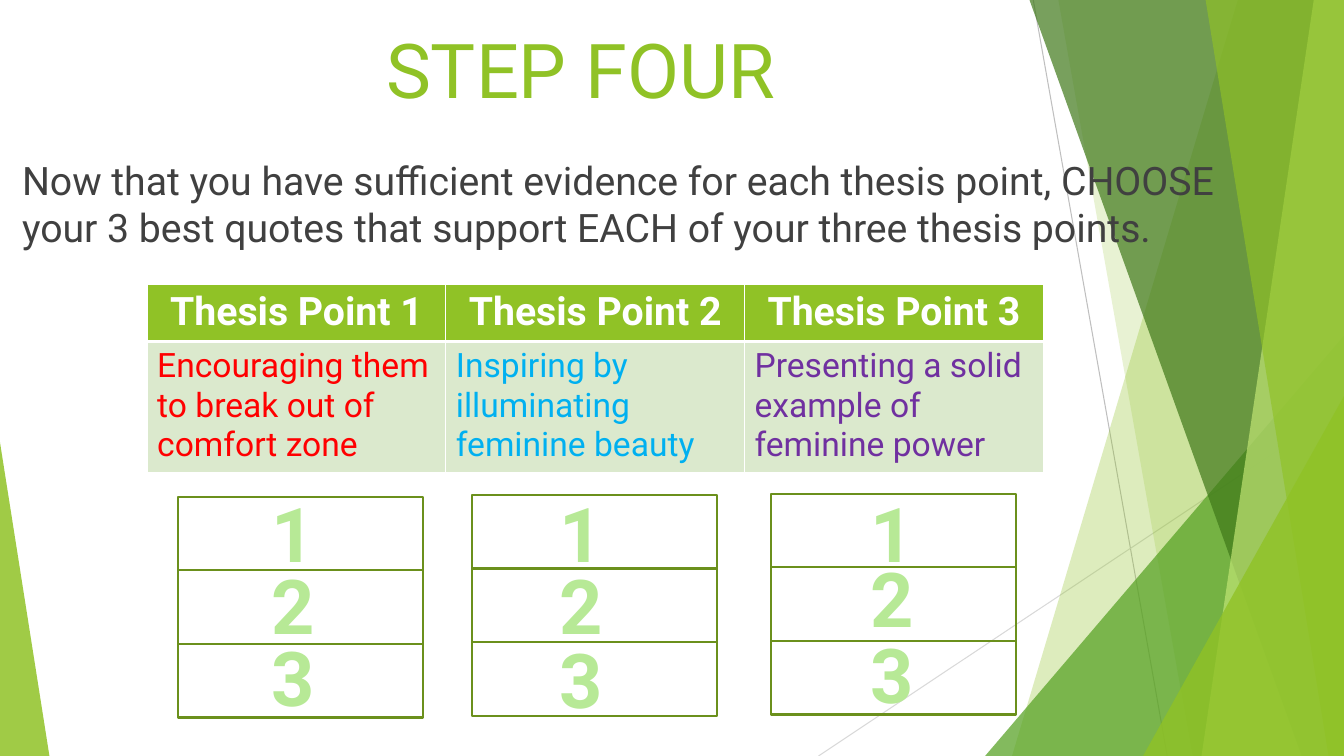
"""Build the "Step Four" slide: thesis points with three numbered quote boxes each."""
from dataclasses import dataclass
from typing import Any

from lxml.etree import SubElement
from pptx import Presentation
from pptx.dml.color import RGBColor
from pptx.enum.shapes import MSO_CONNECTOR as Connector, MSO_SHAPE as Preset
from pptx.enum.text import MSO_ANCHOR as Anchor, PP_ALIGN as Align
from pptx.oxml.ns import qn
from pptx.util import Inches, Pt

SLIDE_WIDTH, SLIDE_HEIGHT = Inches(13.33), Inches(7.5)
GREEN = RGBColor(0x90, 0xC2, 0x26)
LEAF = RGBColor(0x54, 0xA0, 0x21)
FOREST = RGBColor(0x3F, 0x78, 0x19)
LIME = RGBColor(0xC0, 0xE4, 0x74)
OLIVE = RGBColor(0x6B, 0x90, 0x1C)
MINT = RGBColor(0xB7, 0xE9, 0x96)
PALE = RGBColor(0xDB, 0xE9, 0xCD)
CHARCOAL = RGBColor(0x40, 0x40, 0x40)
GRAY = RGBColor(0xBF, 0xBF, 0xBF)
SILVER = RGBColor(0xD9, 0xD9, 0xD9)
WHITE = RGBColor(0xFF, 0xFF, 0xFF)
RED = RGBColor(0xFF, 0x00, 0x00)
BLUE = RGBColor(0x00, 0xB0, 0xF0)
PURPLE = RGBColor(0x70, 0x30, 0xA0)


@dataclass(frozen=True)
class Area:
    """A rectangle in percent of the slide's width and height."""
    left: float
    top: float
    width: float
    height: float

    def box(self) -> tuple[int, int, int, int]:
        """Return the rectangle in slide units."""
        return across(self.left), down(self.top), across(self.width), down(self.height)


@dataclass(frozen=True)
class Ray:
    """A thin background line between two points."""
    start: tuple[float, float]
    end: tuple[float, float]
    color: RGBColor


@dataclass(frozen=True)
class Facet:
    """A slanted pane that reaches the right edge."""
    top_left: float
    bottom_left: float
    color: RGBColor
    opacity: int


@dataclass(frozen=True)
class Wedge:
    """A right-angled triangle at the foot of the slide."""
    area: Area
    apex: float
    color: RGBColor
    opacity: int


@dataclass(frozen=True)
class ThesisPoint:
    """A table column with its stack of quote boxes."""
    heading: str
    summary: str
    color: RGBColor
    box_left: float
    box_top: float
    digit_left: float
    digit_tops: tuple[float, float, float]


RAYS = (Ray((76.88, 0), (86.85, 100), GRAY), Ray((100, 53.73), (60.9, 100), SILVER))
PANES = (
    Facet(92.1, 75.3, GREEN, 30),
    Facet(78.75, 88.73, GREEN, 20),
    Wedge(Area(73.3, 44.4, 26.7, 55.6), 1, LEAF, 72),
    Facet(76.6, 96.85, FOREST, 70),
    Facet(97.75, 89.4, LIME, 70),
    Facet(89.7, 98.85, GREEN, 65),
    Wedge(Area(85.05, 52.4, 14.95, 47.6), 1, GREEN, 80),
    Wedge(Area(0, 58.5, 3.68, 41.5), 0, GREEN, 85),
)
POINTS = (
    ThesisPoint("Thesis Point 1", "Encouraging them to break out of comfort zone", RED,
                13.28, 65.73, 19.35, (63.73, 73.33, 82.8)),
    ThesisPoint("Thesis Point 2", "Inspiring by illuminating feminine beauty", BLUE,
                35.1, 65.47, 40.8, (63.73, 73.33, 83.07)),
    ThesisPoint("Thesis Point 3", "Presenting a solid example of feminine power", PURPLE,
                57.4, 65.33, 63.98, (63.73, 72.4, 82.4)),
)
TITLE_AREA = Area(7.95, 2.4, 70.5, 19.2)
BODY_AREA = Area(0.9, 20, 92.63, 25.07)
TABLE_AREA = Area(10.95, 37.6, 66.68, 24.4)
ROW_HEIGHTS = (7.3, 17.1)
BOX_WIDTH, BOX_HEIGHT = 18.23, 9.73
DIGIT_WIDTH, DIGIT_HEIGHT = 4.88, 13.47
BODY_TEXT = ("Now that you have sufficient evidence for each thesis point, CHOOSE "
             "your 3 best quotes that support EACH of your three thesis points.")


def across(percent: float) -> int:
    """Turn a share of the slide's width into slide units."""
    return round(SLIDE_WIDTH * percent / 100)


def down(percent: float) -> int:
    """Turn a share of the slide's height into slide units."""
    return round(SLIDE_HEIGHT * percent / 100)


def write(frame: Any, text: str, size: int, color: RGBColor,
          align: Align = Align.LEFT, bold: bool = False) -> None:
    """Fill a text frame with one formatted paragraph."""
    paragraph = frame.paragraphs[0]
    paragraph.alignment = align
    run = paragraph.add_run()
    run.text = text
    for name, value in {"name": "Roboto", "size": Pt(size), "bold": bold}.items():
        setattr(run.font, name, value)
    run.font.color.rgb = color


def add_text(slide: Any, area: Area, text: str, size: int, color: RGBColor,
             align: Align = Align.LEFT, bold: bool = False) -> None:
    """Add a wrapping text box anchored at its top."""
    frame = slide.shapes.add_textbox(*area.box()).text_frame
    for name, value in {"word_wrap": True, "vertical_anchor": Anchor.TOP}.items():
        setattr(frame, name, value)
    write(frame, text, size, color, align, bold)


def add_ray(slide: Any, ray: Ray) -> None:
    """Draw a thin background line."""
    (start_x, start_y), (end_x, end_y) = ray.start, ray.end
    line = slide.shapes.add_connector(
        Connector.STRAIGHT, across(start_x), down(start_y), across(end_x), down(end_y))
    line.line.color.rgb = ray.color
    line.line.width = Pt(0.75)
    SubElement(line.element.spPr, qn("a:effectLst"))


def add_pane(slide: Any, pane: Facet | Wedge) -> None:
    """Draw a translucent facet or wedge."""
    if isinstance(pane, Facet):
        builder = slide.shapes.build_freeform(across(pane.top_left), 0)
        builder.add_line_segments(
            [(across(100), 0), (across(100), down(100)), (across(pane.bottom_left), down(100))])
        shape = builder.convert_to_shape()
    else:
        shape = slide.shapes.add_shape(Preset.ISOSCELES_TRIANGLE, *pane.area.box())
        shape.adjustments[0] = pane.apex
    shape.shadow.inherit = False
    shape.fill.solid()
    shape.fill.fore_color.rgb = pane.color
    shape.line.fill.background()
    color = shape.element.spPr.find(f"{qn('a:solidFill')}/{qn('a:srgbClr')}")
    SubElement(color, qn("a:alpha"), val=str(pane.opacity * 1000))


def add_borders(cell: Any, widths: dict[str, int]) -> None:
    """Give a table cell white borders of the given point widths."""
    properties = cell._tc.get_or_add_tcPr()
    for position, (side, width) in enumerate(widths.items()):
        border = SubElement(properties, qn(f"a:ln{side}"), w=str(Pt(width)))
        fill = SubElement(border, qn("a:solidFill"))
        SubElement(fill, qn("a:srgbClr"), val=str(WHITE))
        properties.insert(position, border)


def add_points_table(slide: Any) -> None:
    """Add the table of thesis points."""
    table = slide.shapes.add_table(len(ROW_HEIGHTS), len(POINTS), *TABLE_AREA.box()).table
    table.horz_banding = False
    for row, height in zip(table.rows, ROW_HEIGHTS):
        row.height = down(height)
    for column, point in enumerate(POINTS):
        table.columns[column].width = across(TABLE_AREA.width / len(POINTS))
        header, summary = table.cell(0, column), table.cell(1, column)
        write(header.text_frame, point.heading, 28, WHITE, Align.CENTER, True)
        write(summary.text_frame, point.summary, 24, point.color)
        for cell, color, top, bottom in ((header, GREEN, 1, 3), (summary, PALE, 3, 1)):
            cell.fill.solid()
            cell.fill.fore_color.rgb = color
            add_borders(cell, {"L": 1, "R": 1, "T": top, "B": bottom})


def add_quote_boxes(slide: Any, point: ThesisPoint) -> None:
    """Draw the numbered quote boxes of one thesis point."""
    for index, digit_top in enumerate(point.digit_tops):
        digit_area = Area(point.digit_left, digit_top, DIGIT_WIDTH, DIGIT_HEIGHT)
        add_text(slide, digit_area, str(index + 1), 54, MINT, Align.CENTER, True)
        area = Area(point.box_left, point.box_top + index * BOX_HEIGHT, BOX_WIDTH, BOX_HEIGHT)
        shape = slide.shapes.add_shape(Preset.RECTANGLE, *area.box())
        shape.shadow.inherit = False
        shape.fill.background()
        shape.line.color.rgb = OLIVE
        shape.line.width = Pt(1.5)


def main() -> None:
    """Build and save the presentation."""
    presentation = Presentation()
    for name, value in {"slide_width": SLIDE_WIDTH, "slide_height": SLIDE_HEIGHT}.items():
        setattr(presentation, name, value)
    slide = presentation.slides.add_slide(presentation.slide_layouts[6])
    for ray in RAYS:
        add_ray(slide, ray)
    for pane in PANES:
        add_pane(slide, pane)
    add_text(slide, TITLE_AREA, "STEP FOUR", 54, GREEN, Align.CENTER)
    add_text(slide, BODY_AREA, BODY_TEXT, 28, CHARCOAL)
    add_points_table(slide)
    for point in POINTS:
        add_quote_boxes(slide, point)
    presentation.save("out.pptx")


if __name__ == "__main__":
    main()
